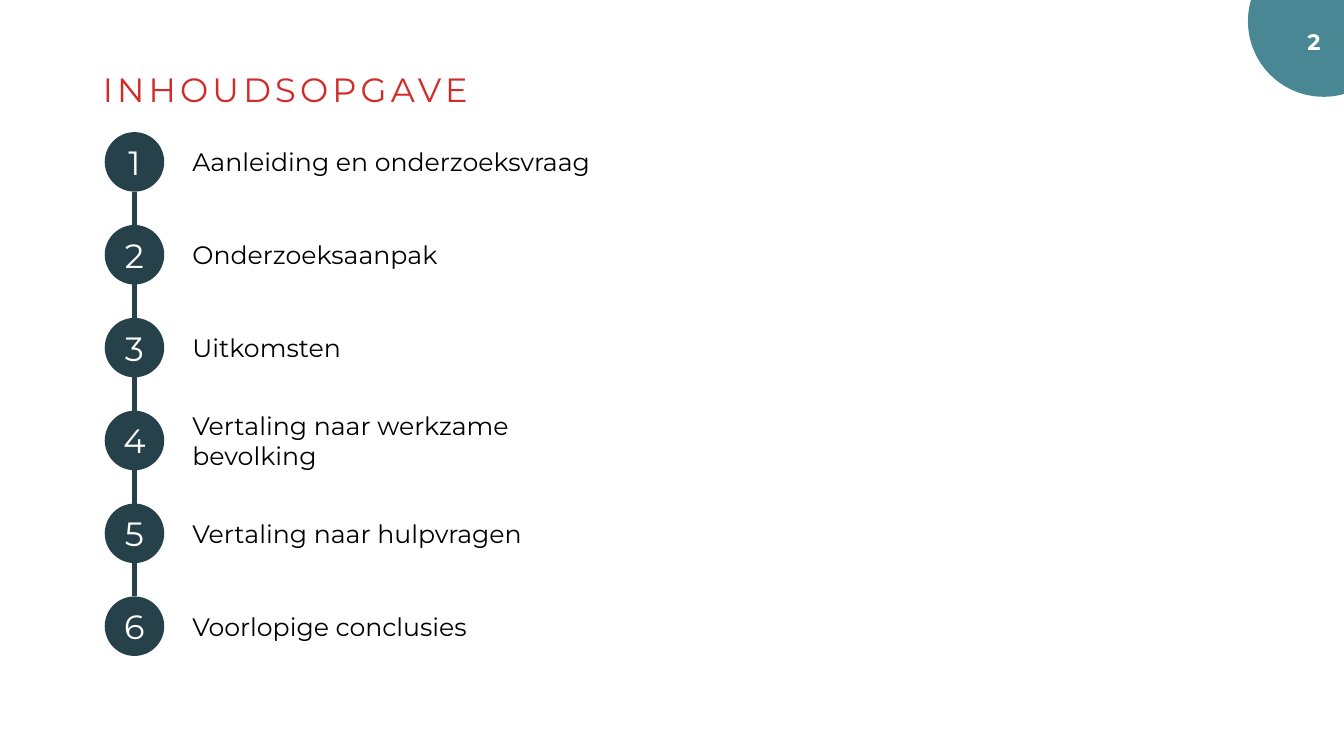
import pptx
import pptx.dml.color
import pptx.enum.shapes
import pptx.enum.text
import pptx.oxml.ns
import pptx.util
from lxml import etree

Cm, Pt = pptx.util.Cm, pptx.util.Pt
ALIGN = pptx.enum.text.PP_ALIGN
ANCHOR = pptx.enum.text.MSO_ANCHOR
SHAPE = pptx.enum.shapes.MSO_SHAPE
COLORS = {"white": "FEFFFE", "teal": "498794", "dark": "264149",
          "red": "D22C2A", "black": "000000"}
TOPICS = ["Aanleiding en onderzoeksvraag", "Onderzoeksaanpak", "Uitkomsten",
          "Vertaling naar werkzame bevolking", "Vertaling naar hulpvragen",
          "Voorlopige conclusies"]

# Agenda grid, in centimetres
CIRCLE_LEFT, CIRCLE_TOP, CIRCLE_SIZE, PITCH = 2.64, 3.33, 1.5, 2.34
TOPIC_LEFT, TOPIC_WIDTH, TOPIC_HEIGHT = 4.85, 10.74, 2.1


def rgb(name):
    return pptx.dml.color.RGBColor.from_string(COLORS[name])


class SlideBuilder:
    font = "Montserrat"

    def __init__(self, slide):
        self.slide = slide
        slide.background.fill.solid()
        slide.background.fill.fore_color.rgb = rgb("white")

    def set_text(self, sp, text, size, color, align=ALIGN.LEFT,
                 anchor=ANCHOR.MIDDLE, margins=(0, 0), bold=False, spacing=0):
        """Fill a shape with one paragraph; margins are (sides, top and bottom) in cm."""
        tf = sp.text_frame
        side, edge = map(Cm, margins)
        frame_format = {"word_wrap": True, "vertical_anchor": anchor,
                        "auto_size": pptx.enum.text.MSO_AUTO_SIZE.NONE,
                        "margin_left": side, "margin_right": side,
                        "margin_top": edge, "margin_bottom": edge}
        for name, value in frame_format.items():
            setattr(tf, name, value)
        p = tf.paragraphs[0]
        p.alignment = align
        r = p.add_run()
        r.text = text
        font_format = {"name": self.font, "size": Pt(size), "bold": bold}
        for name, value in font_format.items():
            setattr(r.font, name, value)
        r.font.color.rgb = rgb(color)
        if spacing:
            r.font._element.set("spc", str(round(spacing * 100)))
        return p

    def title(self, text, left, top, width, height):
        sp = self.slide.shapes.title
        box = {"left": left, "top": top, "width": width, "height": height}
        for name, value in box.items():
            setattr(sp, name, Cm(value))
        p = self.set_text(sp, text, 24, "red", anchor=ANCHOR.TOP,
                          margins=(0.25, 0.13), spacing=3)
        p.line_spacing = 0.9

    def circle(self, left, top, size, color):
        sp = self.slide.shapes.add_shape(
            SHAPE.OVAL, Cm(left), Cm(top), Cm(size), Cm(size))
        sp.shadow.inherit = False
        sp.fill.solid()
        sp.fill.fore_color.rgb = rgb(color)
        sp.line.fill.background()
        return sp

    def text(self, text, left, top, width, height, **style):
        sp = self.slide.shapes.add_textbox(
            Cm(left), Cm(top), Cm(width), Cm(height))
        self.set_text(sp, text, **style)

    def vertical_line(self, x, top, bottom, color, width):
        cxn = self.slide.shapes.add_connector(
            pptx.enum.shapes.MSO_CONNECTOR.STRAIGHT,
            Cm(x), Cm(top), Cm(x), Cm(bottom))
        cxn.line.color.rgb = rgb(color)
        cxn.line.width = Pt(width)
        etree.SubElement(cxn._element.spPr, pptx.oxml.ns.qn("a:effectLst"))


def main():
    prs = pptx.Presentation()
    prs.slide_width, prs.slide_height = Cm(33.87), Cm(19.05)
    s = SlideBuilder(prs.slides.add_slide(prs.slide_layouts[5]))

    s.circle(31.45, -1.37, 3.81, "teal")
    s.text("2", 28.93, 0.58, 4.6, 0.94, size=16, color="white", bold=True,
           align=ALIGN.RIGHT, margins=(0.25, 0.13), spacing=1.8)
    s.title("INHOUDSOPGAVE", 2.34, 1.73, 29.2, 0.84)

    last_top = CIRCLE_TOP + PITCH * (len(TOPICS) - 1)
    s.vertical_line(CIRCLE_LEFT + CIRCLE_SIZE / 2, CIRCLE_TOP + CIRCLE_SIZE,
                    last_top, "dark", 3)
    for i, topic in enumerate(TOPICS):
        top = CIRCLE_TOP + i * PITCH
        sp = s.circle(CIRCLE_LEFT, top, CIRCLE_SIZE, "dark")
        s.set_text(sp, str(i + 1), 24, "white", align=ALIGN.CENTER)
        s.text(topic, TOPIC_LEFT, top + (CIRCLE_SIZE - TOPIC_HEIGHT) / 2,
               TOPIC_WIDTH, TOPIC_HEIGHT, size=18, color="black")
    prs.save("out.pptx")


if __name__ == "__main__":
    main()
